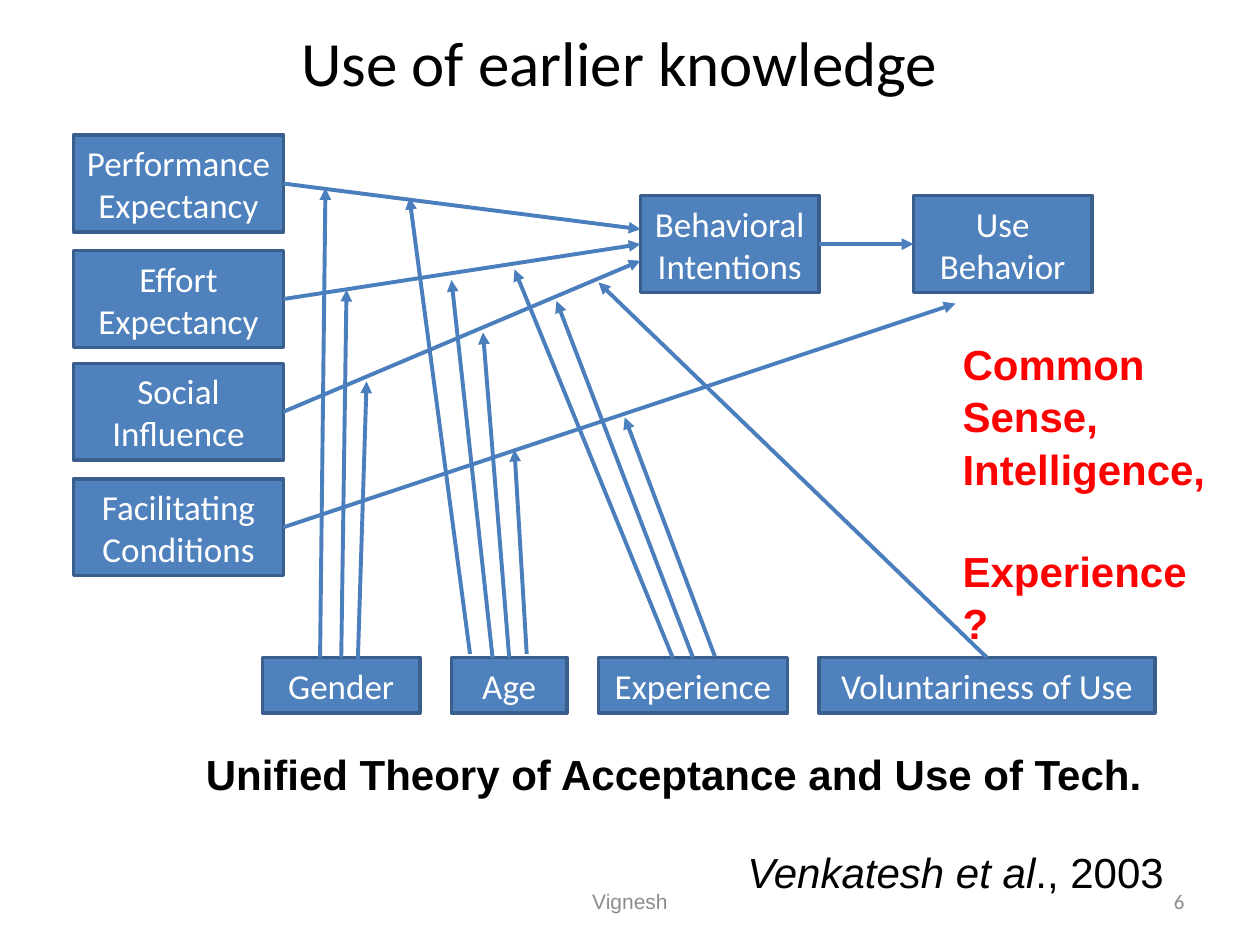
from dataclasses import dataclass
from typing import Optional

from lxml import etree
from pptx import Presentation
from pptx import util as u
from pptx.dml.color import RGBColor
from pptx.enum import shapes, text
from pptx.oxml.ns import qn

TOP, LEFT, RIGHT = 0, 1, 3


@dataclass(frozen=True)
class Theme:
    fill: str = "4F81BD"
    border: str = "3A5F8C"
    arrow: str = "4B7EBC"
    light: str = "FFFFFF"
    dark: str = "000000"
    accent: str = "FF0000"
    muted: str = "8C8C8C"
    heading: str = "Calibri"
    body: str = "Arial"
    title_size: float = 36
    note_size: float = 24
    box_size: float = 20
    footer_size: float = 12
    border_width: float = 2
    arrow_width: float = 2.25


@dataclass(frozen=True)
class Box:
    label: str
    left: float
    top: float
    width: float
    height: float


@dataclass(frozen=True)
class Arrow:
    start: tuple[float, float]
    end: tuple[float, float]
    source: Optional[tuple[str, int]] = None
    target: Optional[tuple[str, int]] = None


@dataclass(frozen=True)
class Label:
    paragraphs: tuple[str, ...]
    left: float
    top: float
    width: float
    height: float
    size: float
    color: str
    font: str
    align: text.PP_ALIGN = text.PP_ALIGN.LEFT
    anchor: text.MSO_ANCHOR = text.MSO_ANCHOR.TOP
    bold: bool = False
    gap: float = 0
    spacing: float = 1.0


THEME = Theme()
PREDICTORS = [
    Box(name, 42, top, 120, 55.4)
    for name, top in [
        ("Performance Expectancy", 77.2),
        ("Effort Expectancy", 143.2),
        ("Social Influence", 207.6),
        ("Facilitating Conditions", 273.6),
    ]
]
OUTCOMES = [
    Box(name, left, 111.8, 102, 55.4)
    for name, left in [("Behavioral Intentions", 366), ("Use Behavior", 522)]
]
MODERATORS = [
    Box(name, left, 375.8, width, 31.6)
    for name, left, width in [
        ("Gender", 150, 90),
        ("Age", 258, 66),
        ("Experience", 342, 108),
        ("Voluntariness of Use", 468, 192),
    ]
]
INTENTIONS = "Behavioral Intentions"
ARROWS = [
    Arrow((162, 105), (366, 131), ("Performance Expectancy", RIGHT)),
    Arrow((162, 171), (366, 139.5), ("Effort Expectancy", RIGHT), (INTENTIONS, LEFT)),
    Arrow((162, 235), (366, 149), ("Social Influence", RIGHT)),
    Arrow((162, 301), (546, 173.5), ("Facilitating Conditions", RIGHT)),
    Arrow((468, 139.5), (522, 139.5), (INTENTIONS, RIGHT), ("Use Behavior", LEFT)),
    Arrow((182.9, 376), (186, 107.5)),
    Arrow((195, 376), (198, 165.6), ("Gender", TOP)),
    Arrow((204.5, 377), (209.5, 218)),
    Arrow((268.6, 373.7), (234, 113)),
    Arrow((281.5, 376), (258, 160)),
    Arrow((291, 376), (276, 190), ("Age", TOP)),
    Arrow((301, 373.7), (294, 257)),
    Arrow((384.5, 376), (294, 154)),
    Arrow((396, 376), (318, 172), ("Experience", TOP)),
    Arrow((408.5, 375), (357, 238.5)),
    Arrow((564, 376), (342, 161.4), ("Voluntariness of Use", TOP)),
]
CENTER, MIDDLE = text.PP_ALIGN.CENTER, text.MSO_ANCHOR.MIDDLE
TITLE = Label(("Use of earlier knowledge",), 12, 9.4, 684, 51,
              THEME.title_size, THEME.dark, THEME.heading, CENTER, MIDDLE)
FOOTER = Label(("Vignesh",), 246, 500.4, 228, 28.8,
               THEME.footer_size, THEME.muted, THEME.body, CENTER, MIDDLE)
NUMBER = Label(("6",), 516, 500.4, 168, 28.8, THEME.footer_size, THEME.muted,
               THEME.heading, text.PP_ALIGN.RIGHT, MIDDLE)
CITATION = Label(("Venkatesh et al., 2003",), 420, 480.2, 264, 28.8,
                 THEME.note_size, THEME.dark, THEME.body)
THEORY = Label(("Unified Theory of Acceptance and Use of Tech.",), 62, 424, 646, 36,
               THEME.note_size, THEME.dark, THEME.body, CENTER, bold=True)
QUESTION = Label(("Common Sense, Intelligence,", "Experience?"), 543, 188.6, 155.5, 152.6,
                 THEME.note_size, THEME.accent, THEME.body,
                 bold=True, gap=28.7, spacing=1.04)


def style_font(font, size: float, color: str, name: str, bold: bool = False) -> None:
    font.size = u.Pt(size)
    font.name = name
    font.bold = bold
    font.color.rgb = RGBColor.from_string(color)


def draw_box(page, box: Box):
    shape = page.shapes.add_shape(
        shapes.MSO_SHAPE.RECTANGLE,
        u.Pt(box.left), u.Pt(box.top), u.Pt(box.width), u.Pt(box.height))
    shape.shadow.inherit = False
    shape.fill.solid()
    shape.fill.fore_color.rgb = RGBColor.from_string(THEME.fill)
    shape.line.color.rgb = RGBColor.from_string(THEME.border)
    shape.line.width = u.Pt(THEME.border_width)
    frame = shape.text_frame
    frame.word_wrap = True
    frame.vertical_anchor = MIDDLE
    frame.text = box.label
    para = frame.paragraphs[0]
    para.alignment = CENTER
    style_font(para.runs[0].font, THEME.box_size, THEME.light, THEME.heading)
    return shape


def draw_arrow(page, arrow: Arrow, boxes: dict) -> None:
    line = page.shapes.add_connector(
        shapes.MSO_CONNECTOR.STRAIGHT, *map(u.Pt, arrow.start + arrow.end))
    if arrow.source:
        name, side = arrow.source
        line.begin_connect(boxes[name], side)
    if arrow.target:
        name, side = arrow.target
        line.end_connect(boxes[name], side)
    line.line.color.rgb = RGBColor.from_string(THEME.arrow)
    line.line.width = u.Pt(THEME.arrow_width)
    etree.SubElement(line.line._get_or_add_ln(), qn("a:tailEnd"), type="triangle")
    etree.SubElement(line._element.spPr, qn("a:effectLst"))


def draw_label(page, label: Label):
    box = page.shapes.add_textbox(
        u.Pt(label.left), u.Pt(label.top), u.Pt(label.width), u.Pt(label.height))
    frame = box.text_frame
    frame.word_wrap = True
    frame.vertical_anchor = label.anchor
    frame.text = "\n".join(label.paragraphs)
    for index, para in enumerate(frame.paragraphs):
        para.alignment = label.align
        para.line_spacing = label.spacing
        if index:
            para.space_before = u.Pt(label.gap)
        for span in para.runs:
            style_font(span.font, label.size, label.color, label.font, label.bold)
    return box


def draw_citation(page) -> None:
    para = draw_label(page, CITATION).text_frame.paragraphs[0]
    authors = para.runs[0]
    authors.text = "Venkatesh et al"
    authors.font.italic = True
    year = para.add_run()
    year.text = "., 2003"
    style_font(year.font, CITATION.size, CITATION.color, CITATION.font)


def main() -> None:
    deck = Presentation()
    deck.slide_width, deck.slide_height = u.Pt(720), u.Pt(540)
    page = deck.slides.add_slide(deck.slide_layouts[6])
    for label in (TITLE, FOOTER, NUMBER):
        draw_label(page, label)
    boxes = {box.label: draw_box(page, box) for box in PREDICTORS + OUTCOMES + MODERATORS}
    for arrow in ARROWS:
        draw_arrow(page, arrow, boxes)
    draw_citation(page)
    for label in (THEORY, QUESTION):
        draw_label(page, label)
    deck.save("out.pptx")


if __name__ == "__main__":
    main()
